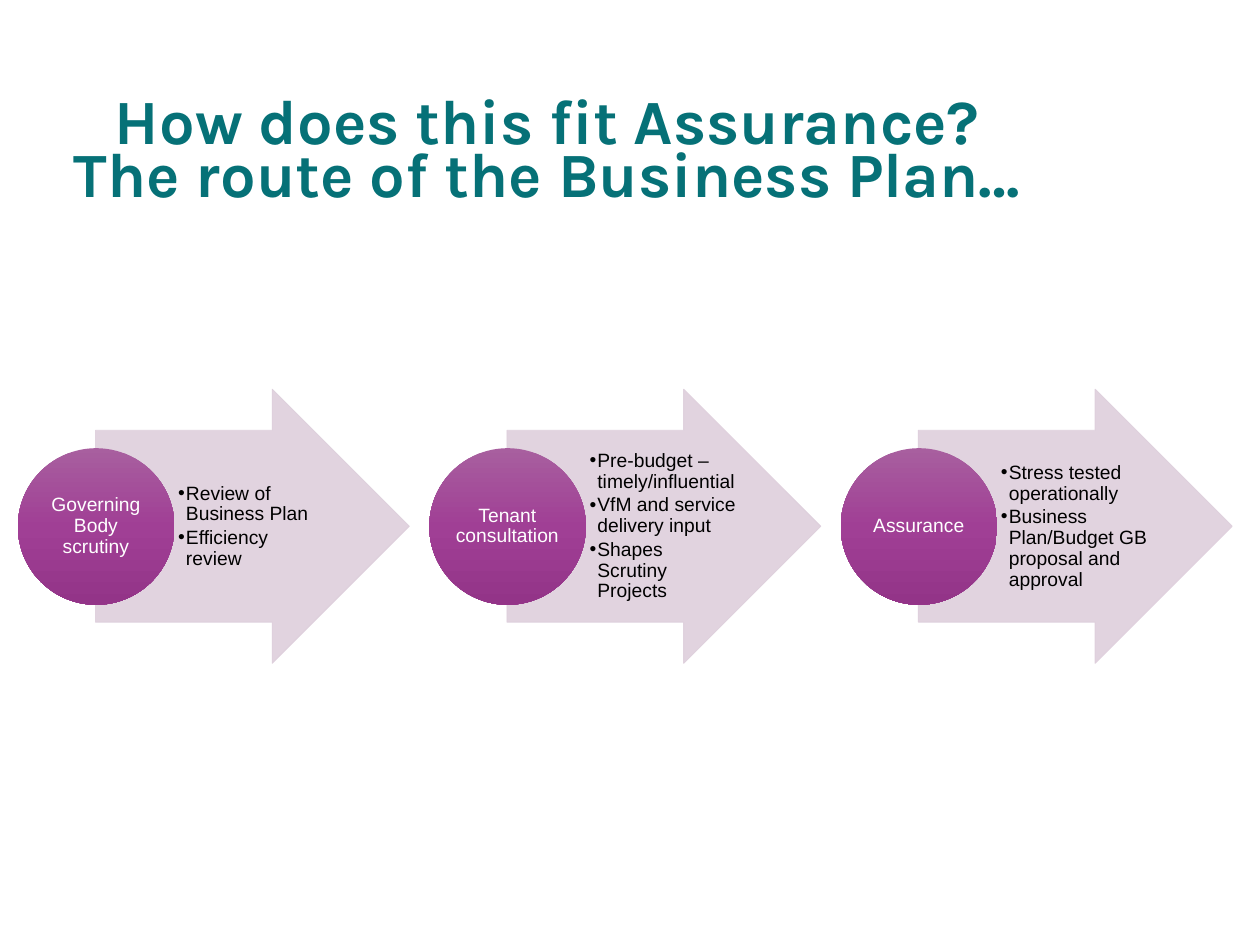
from copy import deepcopy

from lxml.etree import SubElement
from pptx import Presentation
from pptx.dml.color import RGBColor
from pptx.enum.shapes import MSO_SHAPE as SHAPE
from pptx.enum.text import MSO_ANCHOR as ANCHOR, MSO_AUTO_SIZE as AUTO, PP_ALIGN as ALIGN
from pptx.oxml.ns import qn
from pptx.util import Pt

TEAL, PINK, BLACK, WHITE = "067177", "DECFDC", "000000", "FFFFFF"
PURPLES = ("A85F9F", "A03F95", "933488")
PITCH = 235.1
STEPS = [
    ("Governing Body scrutiny", ["Review of Business Plan", "Efficiency review"]),
    ("Tenant consultation", ["Pre-budget – timely/influential",
                             "VfM and service delivery input",
                             "Shapes Scrutiny Projects"]),
    ("Assurance", ["Stress tested operationally",
                   "Business Plan/Budget GB proposal and approval"]),
]


def rgb(value):
    return RGBColor.from_string(value)


def write(p, text, size=11, font="Arial", color=BLACK, bold=False,
          align=ALIGN.LEFT, spacing=0.9, after=0, bullet=False):
    p.alignment, p.line_spacing, p.space_after = align, spacing, Pt(after)
    p.space_before = Pt(0)
    if bullet:
        p.level = 1
        pPr = p._p.get_or_add_pPr()
        pPr.set("marL", str(Pt(4.5)))
        pPr.set("indent", str(Pt(-4.5)))
        SubElement(pPr, qn("a:buFont"), typeface=font)
        SubElement(pPr, qn("a:buChar"), char="•")
    for i, line in enumerate(text.split("\n")):
        if i:
            p.add_line_break()
        r = p.add_run()
        r.text = line
        r.font.size, r.font.name, r.font.bold = Pt(size), font, bold
        r.font.color.rgb = rgb(color)
    for br in p._p.findall(qn("a:br")):
        br.insert(0, deepcopy(r.font._element))


class Deck:
    def __init__(self, width, height):
        self.prs = Presentation()
        self.prs.slide_width, self.prs.slide_height = Pt(width), Pt(height)
        self.s = self.prs.slides.add_slide(self.prs.slide_layouts[5])
        self.group = self.s.shapes.add_group_shape()

    def title(self, text, x, y, w, h):
        sp = self.s.shapes.title
        sp.left, sp.top, sp.width, sp.height = Pt(x), Pt(y), Pt(w), Pt(h)
        tf = sp.text_frame
        tf.word_wrap, tf.auto_size = True, AUTO.NONE
        tf.vertical_anchor = ANCHOR.BOTTOM
        write(tf.paragraphs[0], text, size=36, font="Karla", color=TEAL,
              bold=True, align=ALIGN.CENTER, spacing=0.7)

    def shape(self, kind, x, y, w, h):
        sp = self.group.shapes.add_shape(kind, Pt(x), Pt(y), Pt(w), Pt(h))
        sp.shadow.inherit = False
        return sp

    def arrow(self, x, y, w, h):
        sp = self.shape(SHAPE.RIGHT_ARROW, x, y, w, h)
        sp.adjustments[0], sp.adjustments[1] = 0.7, 0.5
        sp.line.width = Pt(0.5)
        for fill in (sp.fill, sp.line.fill):
            fill.solid()
            fill.fore_color.rgb = rgb(PINK)
        for clr in sp._element.spPr.iter(qn("a:srgbClr")):
            SubElement(clr, qn("a:alpha"), val="90000")

    def circle(self, x, y, d):
        sp = self.shape(SHAPE.OVAL, x, y, d, d)
        sp.line.fill.background()
        sp.fill.gradient()
        sp.fill.gradient_angle = 270
        stops = next(sp._element.spPr.iter(qn("a:gsLst")))
        stops.append(deepcopy(stops[-1]))
        for i, (stop, color) in enumerate(zip(sp.fill.gradient_stops, PURPLES)):
            stop.position = i / 2
            stop.color.rgb = rgb(color)

    def text(self, lines, x, y, w, h, left=0.7, right=0.7, **style):
        tf = self.group.shapes.add_textbox(Pt(x), Pt(y), Pt(w), Pt(h)).text_frame
        tf.word_wrap, tf.vertical_anchor = True, ANCHOR.MIDDLE
        tf.margin_left, tf.margin_right = Pt(left), Pt(right)
        tf.margin_top = tf.margin_bottom = Pt(0.7)
        for i, line in enumerate(lines):
            write(tf.add_paragraph() if i else tf.paragraphs[0], line, **style)


def main():
    deck = Deck(720, 540)
    for i, (name, points) in enumerate(STEPS):
        x = 10.2 + i * PITCH
        deck.arrow(x + 44.4, 222.4, 179.3, 156.6)
        deck.text(points, x + 89.5, 246.1, 87.6, 109.4, left=2.1, right=1.4,
                  after=1.65, bullet=True)
        deck.circle(x, 256.1, 89.5)
        deck.text([name], x + 13, 269.1, 63.3, 63.3, color=WHITE,
                  align=ALIGN.CENTER, after=3.85)
    deck.title("How does this fit Assurance?\nThe route of the Business Plan…",
               -17.3, 38.2, 660.2, 84.2)
    deck.prs.save("out.pptx")


if __name__ == "__main__":
    main()
